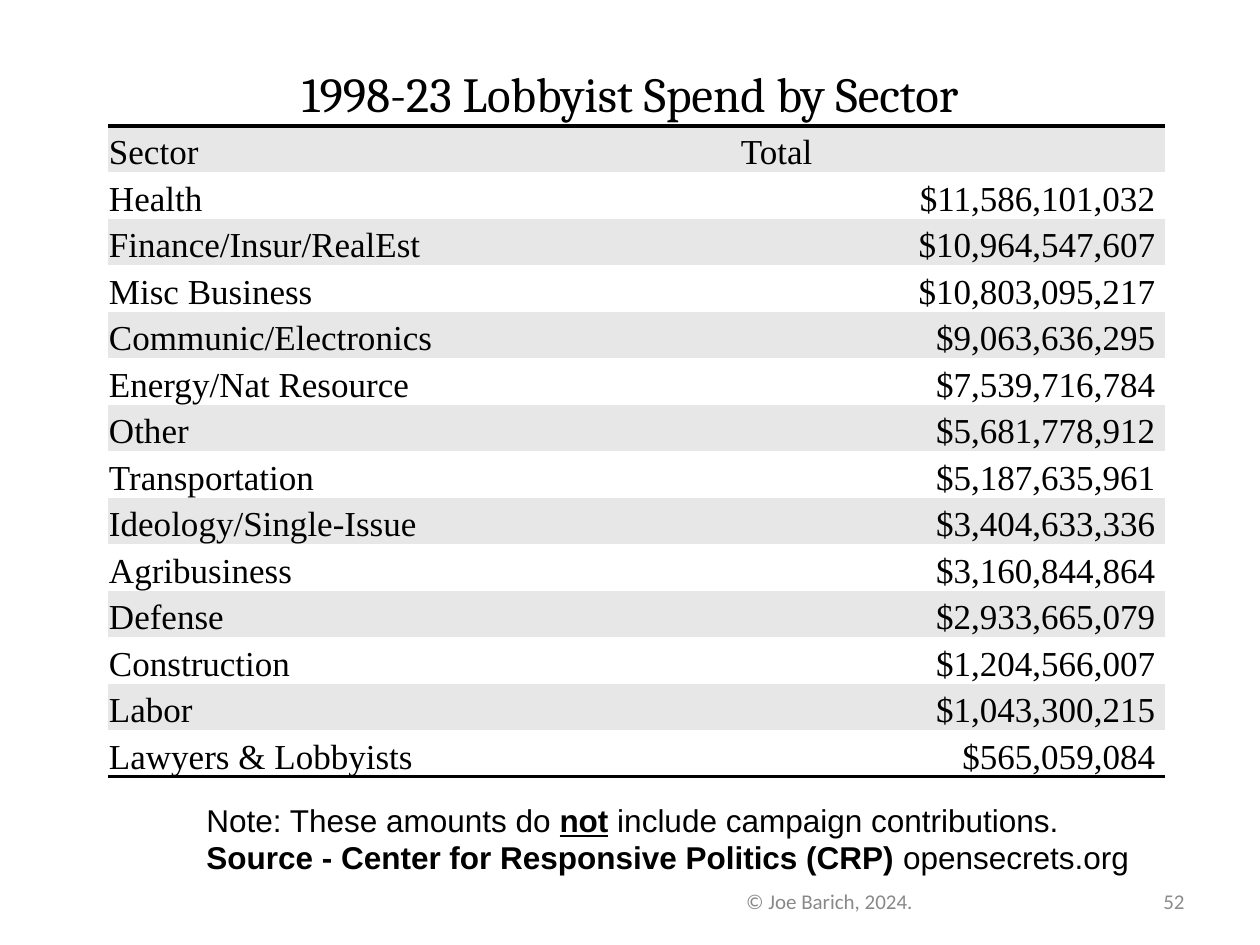
"""Build the lobbyist spend by sector slide."""
import pptx
import pptx.dml.color
import pptx.enum.text
import pptx.oxml
import pptx.oxml.ns
import pptx.util

TITLE = "1998-23 Lobbyist Spend by Sector"
HEADINGS = ("Sector", "Total")
SPEND = [
    ("Health", 11586101032),
    ("Finance/Insur/RealEst", 10964547607),
    ("Misc Business", 10803095217),
    ("Communic/Electronics", 9063636295),
    ("Energy/Nat Resource", 7539716784),
    ("Other", 5681778912),
    ("Transportation", 5187635961),
    ("Ideology/Single-Issue", 3404633336),
    ("Agribusiness", 3160844864),
    ("Defense", 2933665079),
    ("Construction", 1204566007),
    ("Labor", 1043300215),
    ("Lawyers & Lobbyists", 565059084),
]
NOTE = [
    [("Note: These amounts do ", ""), ("not", "bu"), (" include campaign contributions.", "")],
    [("Source - Center for Responsive Politics (CRP) ", "b"), ("opensecrets.org", "")],
]
COPYRIGHT = "© Joe Barich, 2024."
PAGE = "52"

COLORS = {"ink": "000000", "band": "E7E7E7", "plain": "FFFFFF",
          "copyright": "898989", "page": "8C8C8C"}
NO_STYLE = "{2D5ABB26-0587-4C30-8999-92F81FD0307C}"
ALIGN = pptx.enum.text.PP_ALIGN
ANCHOR = pptx.enum.text.MSO_ANCHOR


def px(length):
    return pptx.util.Emu(round(length * 914400 / 126))


def rgb(name):
    return pptx.dml.color.RGBColor.from_string(COLORS[name])


def write(frame, text, font="Arial", size=18, color="ink", align=ALIGN.LEFT):
    paragraphs = [[(text, "")]] if isinstance(text, str) else text
    for index, pieces in enumerate(paragraphs):
        paragraph = frame.add_paragraph() if index else frame.paragraphs[0]
        paragraph.alignment = align
        for words, style in pieces:
            run = paragraph.add_run()
            run.text = words
            run.font.name = font
            run.font.size = pptx.util.Pt(size)
            run.font.color.rgb = rgb(color)
            run.font.bold = "b" in style
            run.font.underline = "u" in style


def add_text(slide, box, text, **text_format):
    frame = slide.shapes.add_textbox(*map(px, box)).text_frame
    frame.word_wrap = True
    frame.vertical_anchor = ANCHOR.MIDDLE
    write(frame, text, **text_format)


def rule(cell, side):
    cell.fill._xPr.insert(0, pptx.oxml.parse_xml(
        f'<a:{side} {pptx.oxml.ns.nsdecls("a")} w="{pptx.util.Pt(2)}"><a:solidFill>'
        f'<a:srgbClr val="{COLORS["ink"]}"/></a:solidFill></a:{side}>'))


def add_spend_table(slide):
    rows = [HEADINGS] + [(sector, f"${total:,} ") for sector, total in SPEND]
    widths, height = (632, 425), 651
    table = slide.shapes.add_table(len(rows), len(widths), px(108), px(126),
                                   px(sum(widths)), px(height)).table
    table.first_row = table.horz_banding = False
    table._tbl.tblPr.find(pptx.oxml.ns.qn("a:tableStyleId")).text = NO_STYLE
    for column, width in zip(table.columns, widths):
        column.width = px(width)
    for r, values in enumerate(rows):
        table.rows[r].height = px(height / len(rows))
        for c, value in enumerate(values):
            cell = table.cell(r, c)
            cell.margin_left = cell.margin_right = cell.margin_top = px(1)
            cell.margin_bottom = 0
            cell.vertical_anchor = ANCHOR.BOTTOM
            cell.fill.solid()
            cell.fill.fore_color.rgb = rgb("plain" if r % 2 else "band")
            write(cell.text_frame, value, font="Times New Roman", size=20,
                  align=ALIGN.RIGHT if r and c else ALIGN.LEFT)
            if r == 0:
                rule(cell, "lnT")
            if r == len(rows) - 1:
                rule(cell, "lnB")


def main():
    deck = pptx.Presentation()
    deck.slide_width, deck.slide_height = px(1260), px(945)
    slide = deck.slides.add_slide(deck.slide_layouts[5])

    title = slide.shapes.title
    title.left, title.top, title.width, title.height = map(px, (63, 38, 1134, 110))
    title.text_frame.vertical_anchor = ANCHOR.MIDDLE
    write(title.text_frame, TITLE, font="Cambria", size=28, align=ALIGN.CENTER)

    add_spend_table(slide)
    add_text(slide, (630, 876, 399, 50), COPYRIGHT, font="Calibri", size=12,
             color="copyright", align=ALIGN.CENTER)
    add_text(slide, (1050, 876, 147, 50), PAGE, font="Calibri", size=12,
             color="page", align=ALIGN.RIGHT)
    add_text(slide, (194, 794, 950, 89), NOTE)
    deck.save("out.pptx")


if __name__ == "__main__":
    main()
